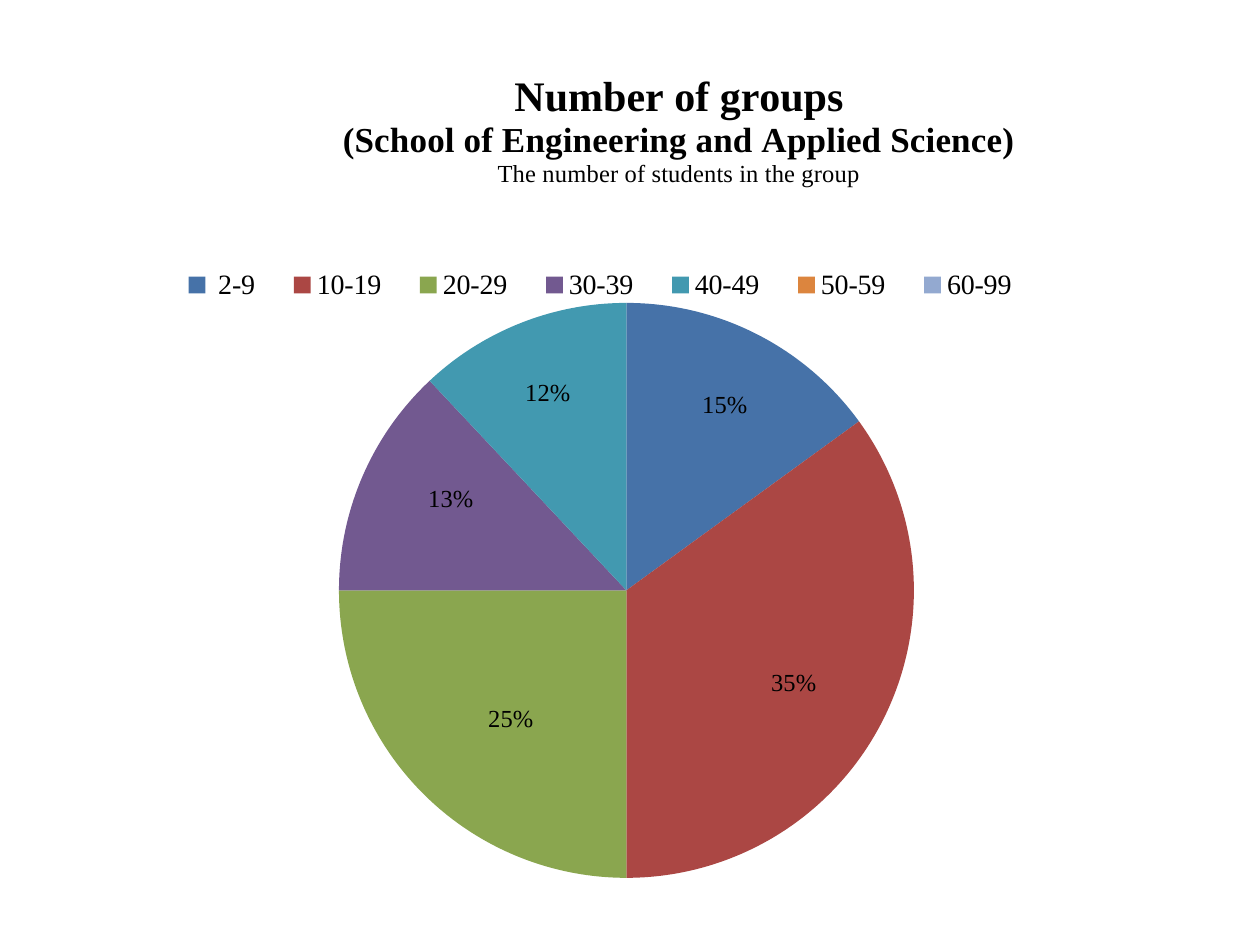
from math import cos, pi, sin

from lxml import etree
from pptx import Presentation
from pptx.chart.data import CategoryChartData
from pptx.dml.color import RGBColor
from pptx.enum.chart import XL_CHART_TYPE, XL_LABEL_POSITION, XL_LEGEND_POSITION
from pptx.oxml.ns import qn
from pptx.util import Emu, Pt

PIE = XL_CHART_TYPE.PIE
CENTER = XL_LABEL_POSITION.CENTER
TOP = XL_LEGEND_POSITION.TOP
PX = 914400 / 126
SERIF = "Times New Roman"
BLANK_LAYOUT = 6

COLORS = {
    "text": "000000",
    " 2-9": "4672A8",
    "10-19": "AB4744",
    "20-29": "8AA64F",
    "30-39": "725990",
    "40-49": "4299B0",
    "50-59": "DC853E",
    "60-99": "93A9D0",
}
GROUPS = {" 2-9": 15, "10-19": 35, "20-29": 25, "30-39": 13, "40-49": 12,
          "50-59": None, "60-99": None}
TITLE_LINES = [
    ("Number of groups", 24, True),
    ("(School of Engineering and Applied Science)", 20, True),
    ("The number of students in the group", 14, False),
]
LABEL_CENTERS = [(696, 346), (765, 624), (482, 660), (422, 440), (519, 334)]


def px(length):
    return Emu(round(length * PX))


def style_font(font, size, bold=False):
    font.name = SERIF
    font.size = Pt(size)
    font.bold = bold
    font.color.rgb = RGBColor.from_string(COLORS["text"])


def make_layout(size, left, top, width=None, height=None, target=None, edge=True):
    layout = etree.Element(qn("c:layout"))
    manual = etree.SubElement(layout, qn("c:manualLayout"))
    settings = []
    if target:
        settings.append(("layoutTarget", target))
    if edge:
        settings += [("xMode", "edge"), ("yMode", "edge")]
    settings += [("x", left / size[0]), ("y", top / size[1])]
    if width:
        settings += [("w", width / size[0]), ("h", height / size[1])]
    for tag, value in settings:
        etree.SubElement(manual, qn("c:" + tag)).set("val", str(value))
    return layout


def place_part(part, layout, before):
    for old in part.findall(qn("c:layout")):
        part.remove(old)
    position = next((i for i, child in enumerate(part)
                     if child.tag in [qn("c:" + tag) for tag in before]), len(part))
    part.insert(position, layout)


def add_title(chart, size):
    frame = chart.chart_title.text_frame
    for i, (line, points, bold) in enumerate(TITLE_LINES):
        paragraph = frame.paragraphs[0] if i == 0 else frame.add_paragraph()
        paragraph.text = line
        style_font(paragraph.font, points, bold)
    chart.chart_title.include_in_layout = False
    place_part(chart.element.find(".//" + qn("c:title")),
               make_layout(size, 310, 8), ["overlay", "spPr", "txPr"])


def add_legend(chart, size):
    chart.has_legend = True
    chart.legend.position = TOP
    chart.legend.include_in_layout = False
    style_font(chart.legend.font, 16)
    place_part(chart.element.find(".//" + qn("c:legend")),
               make_layout(size, 130, 208, 882, 36), ["overlay", "spPr", "txPr"])


def add_slices(chart, size, left, top, diameter):
    plot = chart.plots[0]
    plot.vary_by_categories = True
    place_part(chart.element.find(".//" + qn("c:plotArea")),
               make_layout(size, left, top, diameter, diameter, "inner"), ["pieChart"])
    slices = plot.series[0]
    for i, group in enumerate(GROUPS):
        fill = slices.points[i].format.fill
        fill.solid()
        fill.fore_color.rgb = RGBColor.from_string(COLORS[group])

    labels = slices.data_labels
    labels.show_value = False
    labels.show_percentage = True
    labels.position = CENTER
    style_font(labels.font, 14)

    radius = diameter / 2
    total = sum(value or 0 for value in GROUPS.values())
    passed = 0
    for i, ((x, y), value) in enumerate(zip(LABEL_CENTERS, GROUPS.values())):
        angle = 2 * pi * (passed + value / 2) / total
        passed += value
        label = slices.points[i].data_label
        label.position = CENTER
        style_font(label.font, 14)
        node = chart.element.findall(".//" + qn("c:dLbl"))[i]
        node.find(qn("c:showVal")).set("val", "0")
        node.find(qn("c:showPercent")).set("val", "1")
        dx = x - (left + radius + radius / 2 * sin(angle))
        dy = y - (top + radius - radius / 2 * cos(angle))
        place_part(node, make_layout(size, dx, dy, edge=False),
                   ["tx", "numFmt", "spPr", "txPr", "dLblPos"])


def add_group_chart(slide, left, top, width, height):
    data = CategoryChartData()
    data.categories = list(GROUPS)
    data.add_series("Series 1", list(GROUPS.values()))
    chart = slide.shapes.add_chart(
        PIE, px(left), px(top), px(width), px(height), data).chart
    chart.font.name = "Calibri"
    chart.font.size = Pt(10)
    size = (width, height)
    add_title(chart, size)
    add_legend(chart, size)
    add_slices(chart, size, 310, 244, 575)


def main():
    deck = Presentation()
    deck.slide_width = px(1260)
    deck.slide_height = px(945)
    slide = deck.slides.add_slide(deck.slide_layouts[BLANK_LAYOUT])
    add_group_chart(slide, 29, 59, 1191, 837)
    deck.save("out.pptx")


if __name__ == "__main__":
    main()
